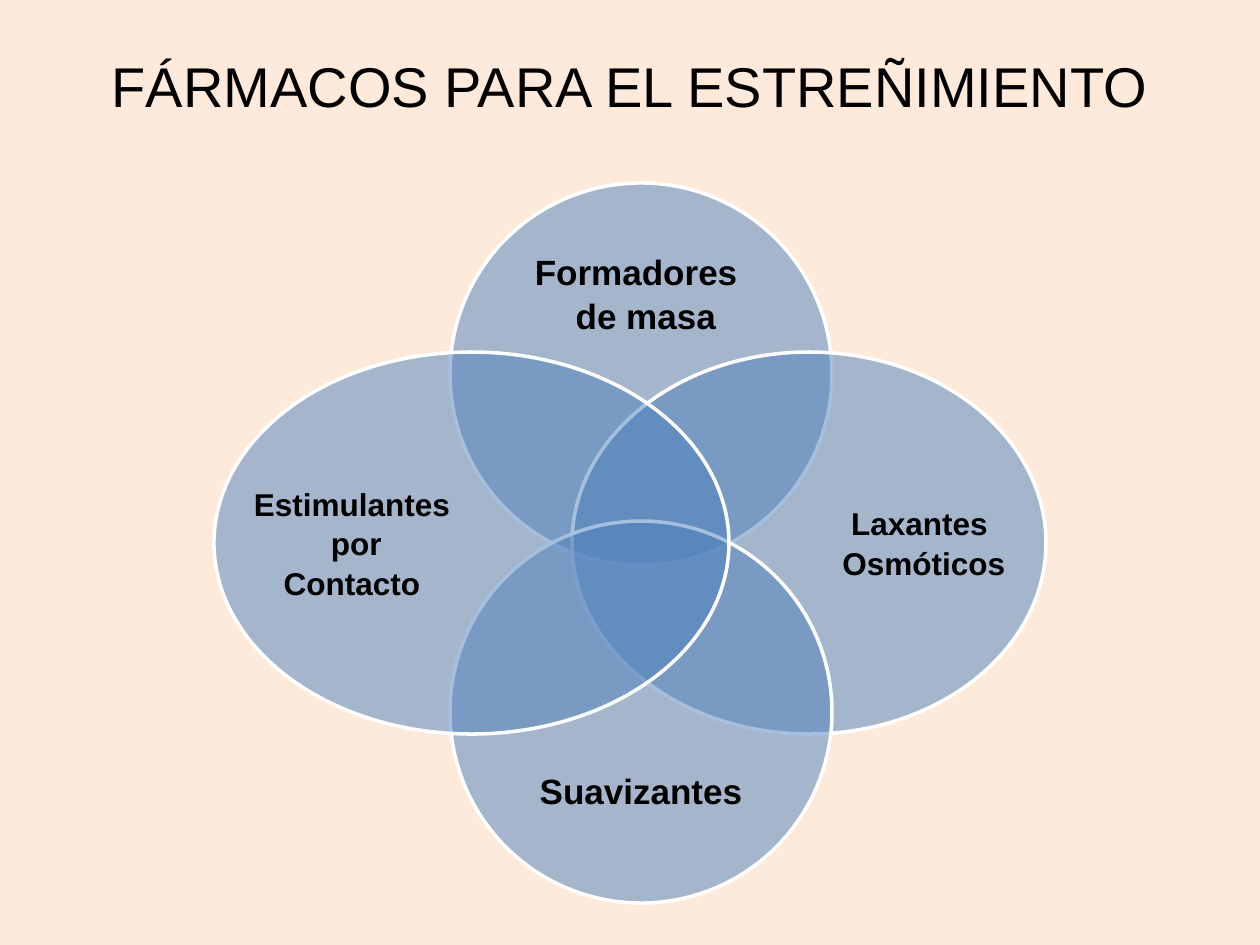
from dataclasses import dataclass
from typing import Tuple

from lxml.etree import SubElement
from pptx import Presentation
from pptx.dml.color import RGBColor as Rgb
from pptx.enum.shapes import MSO_SHAPE as Shape
from pptx.enum.text import MSO_ANCHOR as Anchor, PP_ALIGN as Align
from pptx.oxml.ns import qn
from pptx.util import Pt

SCALE = 914400 / 126
FONT = "Arial"
HEX = {"back": "FDEADA", "oval": "4F81BD", "line": "FFFFFF", "ink": "000000"}
Box = Tuple[int, int, int, int]


@dataclass
class Petal:
    oval: Box
    label: Box
    lines: Tuple[str, ...]
    size: int


SIDE = 382
MID, TOP, STEP = 450, 183, 169
PETALS = [
    Petal((MID, TOP, SIDE, SIDE), (494, 233, 294, 121),
          ("Formadores ", " de masa"), 20),
    Petal((572, TOP + STEP, 474, SIDE), (828, 396, 183, 294),
          ("Laxantes", " Osmóticos"), 18),
    Petal((MID, TOP + 2 * STEP, SIDE, SIDE), (494, 730, 294, 121),
          ("Suavizantes",), 20),
    Petal((214, TOP + STEP, 515, SIDE), (253, 396, 198, 294),
          ("Estimulantes", " por", "Contacto"), 18),
]


def px(n: int) -> int:
    return round(n * SCALE)


def tint(key: str) -> Rgb:
    return Rgb.from_string(HEX[key])


def add_oval(slide, box: Box) -> None:
    oval = slide.shapes.add_shape(Shape.OVAL, *map(px, box))
    oval.shadow.inherit = False
    oval.fill.solid()
    oval.fill.fore_color.rgb = tint("oval")
    color = oval._element.spPr.find(qn("a:solidFill")).find(qn("a:srgbClr"))
    SubElement(color, qn("a:alpha")).set("val", "50000")
    oval.line.color.rgb = tint("line")
    oval.line.width = Pt(2)


def add_text(slide, box: Box, lines: Tuple[str, ...], size: int,
             bold: bool = True, foot: int = 0) -> None:
    frame = slide.shapes.add_textbox(*map(px, box)).text_frame
    frame.word_wrap = True
    frame.vertical_anchor = Anchor.MIDDLE
    frame.margin_left = frame.margin_right = frame.margin_top = 0
    frame.margin_bottom = px(foot)
    for i, line in enumerate(lines):
        para = frame.add_paragraph() if i else frame.paragraphs[0]
        para.alignment = Align.CENTER
        para.space_after = Pt(1)
        run = para.add_run()
        run.text = line
        run.font.name = FONT
        run.font.size = Pt(size)
        run.font.bold = bold
        run.font.color.rgb = tint("ink")


def main() -> None:
    deck = Presentation()
    deck.slide_width, deck.slide_height = px(1260), px(945)
    slide = deck.slides.add_slide(deck.slide_layouts[6])
    slide.background.fill.solid()
    slide.background.fill.fore_color.rgb = tint("back")
    add_text(slide, (63, 38, 1134, 158), ("FÁRMACOS PARA EL ESTREÑIMIENTO",),
             32, bold=False, foot=64)
    for petal in PETALS:
        add_oval(slide, petal.oval)
        add_text(slide, petal.label, petal.lines, petal.size)
    deck.save("out.pptx")


if __name__ == "__main__":
    main()
